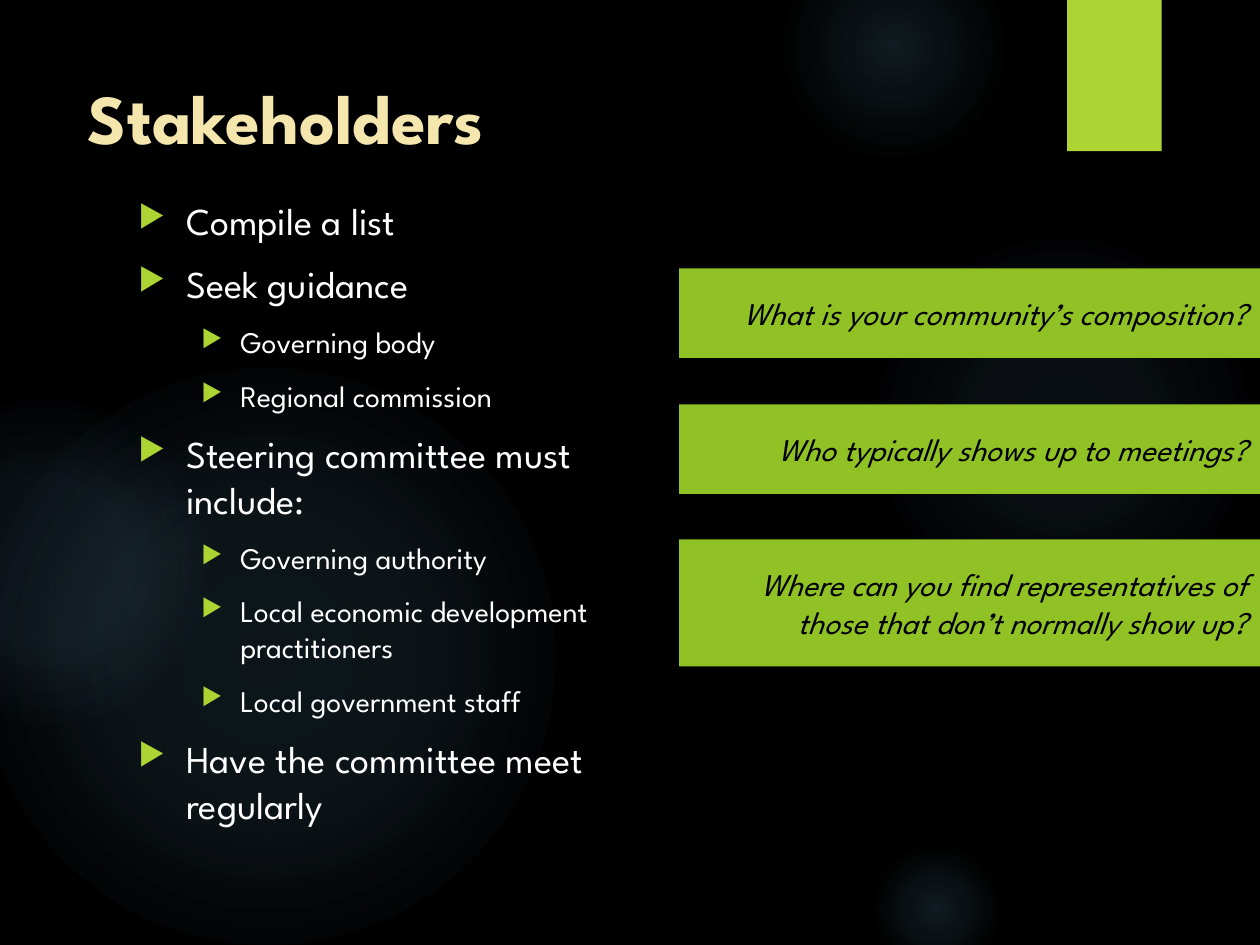
from lxml.etree import SubElement
from pptx import Presentation
from pptx.dml.color import RGBColor
from pptx.enum.shapes import MSO_SHAPE
from pptx.enum.text import MSO_ANCHOR, PP_ALIGN
from pptx.oxml import parse_xml
from pptx.oxml.ns import nsdecls, qn
from pptx.util import Inches, Pt

FONT = "League Spartan"
LIME = "ACD433"
GREEN = "90C226"
GLOW = "7AC4F0"

GLOWS = [
    (6.89, 1.83, 3.08, [(0, 7), (36, 6), (69, 0)]),
    (6.22, -0.5, 1.75, [(0, 14), (36, 7), (73, 0)]),
    (6.89, 6.67, 1.08, [(0, 14), (36, 7), (66, 0)]),
    (-0.17, 2.92, 4.58, [(0, 11), (36, 10), (75, 0)]),
    (-0.92, 3.17, 2.58, [(0, 8), (36, 8), (72, 0)]),
]

STEPS = [
    (0, "Compile a list"),
    (0, "Seek guidance"),
    (1, "Governing body"),
    (1, "Regional commission"),
    (0, "Steering committee must include:"),
    (1, "Governing authority"),
    (1, "Local economic development practitioners"),
    (1, "Local government staff"),
    (0, "Have the committee meet regularly"),
]
LEVELS = [(21.7, 0.38, 0.38), (17.1, 0.81, 0.31)]

QUESTIONS = [
    (2.13, 0.71, "What is your community’s composition?"),
    (3.21, 0.71, "Who typically shows up to meetings?"),
    (4.28, 1.01, "Where can you find representatives of those that don’t normally show up?"),
]


def color(hex_code):
    """Turn a hex string into a colour."""
    return RGBColor.from_string(hex_code)


def style_runs(paragraph, size, hex_code, bold=False, italic=False):
    """Format every run of a paragraph."""
    for run in paragraph.runs:
        run.font.name = FONT
        run.font.size = Pt(size)
        run.font.bold = bold
        run.font.italic = italic
        run.font.color.rgb = color(hex_code)


def add_block(slide, kind, left, top, width, height, fill):
    """Add a filled shape without line or shadow."""
    shape = slide.shapes.add_shape(
        kind, Inches(left), Inches(top), Inches(width), Inches(height))
    shape.shadow.inherit = False
    shape.fill.solid()
    shape.fill.fore_color.rgb = color(fill)
    shape.line.fill.background()
    return shape


def add_glow(slide, left, top, size, stops):
    """Add a circle that fades outwards from its centre."""
    shape = add_block(slide, MSO_SHAPE.OVAL, left, top, size, size, GLOW)
    stop_xml = "".join(
        f'<a:gs pos="{position * 1000}"><a:srgbClr val="{GLOW}">'
        f'<a:alpha val="{alpha * 1000}"/></a:srgbClr></a:gs>'
        for position, alpha in stops)
    gradient = parse_xml(
        f'<a:gradFill {nsdecls("a")} rotWithShape="1"><a:gsLst>{stop_xml}</a:gsLst>'
        '<a:path path="circle"><a:fillToRect l="50000" t="50000" r="50000" b="50000"/>'
        '</a:path></a:gradFill>')
    properties = shape.fill._xPr
    properties.replace(properties.find(qn("a:solidFill")), gradient)


def add_text_box(slide, left, top, width, height):
    """Add a wrapping text box and return its text frame."""
    box = slide.shapes.add_textbox(
        Inches(left), Inches(top), Inches(width), Inches(height))
    box.text_frame.word_wrap = True
    return box.text_frame


def add_bullet(paragraph, margin, hanging):
    """Give a paragraph a hanging triangular bullet."""
    properties = paragraph._p.get_or_add_pPr()
    properties.set("marL", str(Inches(margin)))
    properties.set("indent", str(-Inches(hanging)))
    bullet_color = SubElement(properties, qn("a:buClr"))
    SubElement(bullet_color, qn("a:srgbClr"), val=LIME)
    SubElement(properties, qn("a:buSzPct"), val="80000")
    SubElement(properties, qn("a:buChar"), char="▶")


def add_title(slide, text):
    """Add the slide heading."""
    text_frame = add_text_box(slide, 0.6, 0.54, 9, 1.17)
    text_frame.text = text
    style_runs(text_frame.paragraphs[0], 40, "F5E6AD", bold=True)


def add_steps(slide, steps):
    """Add the two-level bullet list."""
    text_frame = add_text_box(slide, 1, 1.52, 4.33, 4.98)
    text_frame.text = "\n".join(text for _, text in steps)
    for paragraph, (level, _) in zip(text_frame.paragraphs, steps):
        size, margin, hanging = LEVELS[level]
        paragraph.level = level
        paragraph.space_before = Pt(10)
        add_bullet(paragraph, margin, hanging)
        style_runs(paragraph, size, "FFFFFF")


def add_question(slide, top, height, text):
    """Add a green banner with a right-aligned question."""
    shape = add_block(slide, MSO_SHAPE.RECTANGLE, 5.39, top, 4.61, height, GREEN)
    text_frame = shape.text_frame
    text_frame.word_wrap = True
    text_frame.vertical_anchor = MSO_ANCHOR.MIDDLE
    text_frame.text = text
    paragraph = text_frame.paragraphs[0]
    paragraph.alignment = PP_ALIGN.RIGHT
    style_runs(paragraph, 18, "000000", italic=True)


def main():
    """Build and save the slide."""
    presentation = Presentation()
    presentation.slide_width = Inches(10)
    presentation.slide_height = Inches(7.5)
    slide = presentation.slides.add_slide(presentation.slide_layouts[6])
    slide.background.fill.solid()
    slide.background.fill.fore_color.rgb = color("000000")
    for glow in GLOWS:
        add_glow(slide, *glow)
    add_block(slide, MSO_SHAPE.RECTANGLE, 8.47, 0, 0.75, 1.2, LIME)
    add_title(slide, "Stakeholders")
    add_steps(slide, STEPS)
    for question in QUESTIONS:
        add_question(slide, *question)
    presentation.save("out.pptx")


if __name__ == "__main__":
    main()
